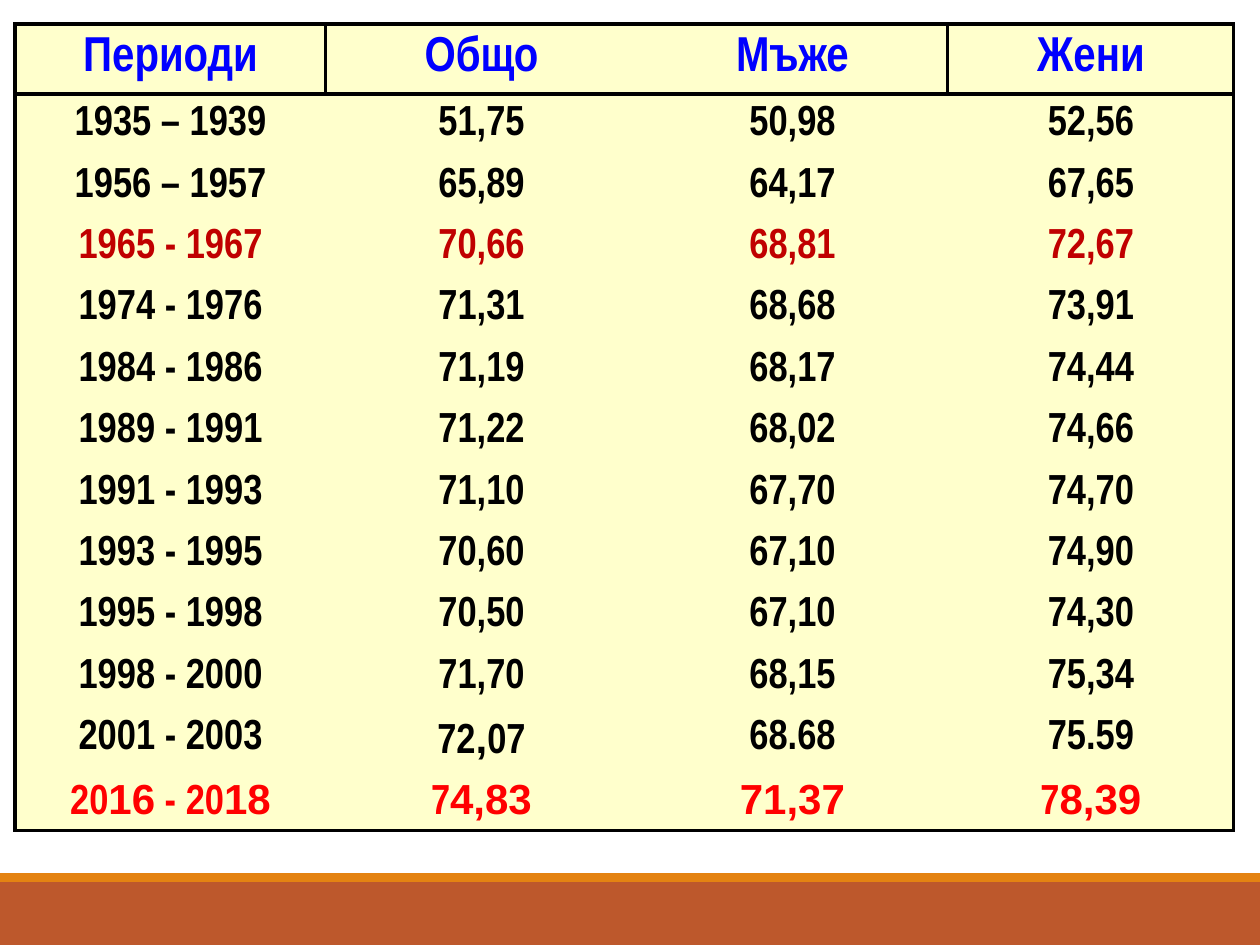
from dataclasses import dataclass

from lxml.etree import SubElement
from pptx import Presentation
from pptx.dml.color import RGBColor
from pptx.enum.shapes import MSO_SHAPE
from pptx.enum.text import MSO_ANCHOR, PP_ALIGN
from pptx.oxml.ns import qn
from pptx.util import Emu, Pt

PX_PER_INCH = 126


@dataclass(frozen=True)
class Theme:
    cell: str = "FFFFCC"
    border: str = "000000"
    header: str = "0000FF"
    body: str = "000000"
    peak: str = "C00000"
    latest: str = "FF0000"
    band: str = "BD582C"
    stripe: str = "E48312"
    narrow: str = "Arial Narrow"
    wide: str = "Arial"
    header_size: int = 28
    body_size: int = 24
    border_width: int = 2


THEME = Theme()

COLUMN_WIDTHS = (311, 311, 311, 286)
HEADER_HEIGHT = 70

# A "|" switches between the narrow and the wide font
LIFE_EXPECTANCY = [
    ("Периоди", "Общо", "Мъже", "Жени"),
    ("1935 – 1939", "51,75", "50,98", "52,56"),
    ("1956 – 1957", "65,89", "64,17", "67,65"),
    ("1965 - 1967", "70,66", "68,81", "72,67"),
    ("1974 - 1976", "71,31", "68,68", "73,91"),
    ("1984 - 1986", "71,19", "68,17", "74,44"),
    ("1989 - 1991", "71,22", "68,02", "74,66"),
    ("1991 - 1993", "71,10", "67,70", "74,70"),
    ("1993 - 1995", "70,60", "67,10", "74,90"),
    ("1995 - 1998", "70,50", "67,10", "74,30"),
    ("1998 - 2000", "71,70", "68,15", "75,34"),
    ("2001 - 2003", "72|,|07", "68.68", "75.59"),
    ("20|16| - 20|18", "7|4,83", "|71,37", "7|8,39"),
]
LAST_ROW = len(LIFE_EXPECTANCY) - 1
LAST_COLUMN = len(COLUMN_WIDTHS) - 1
ROW_COLORS = {0: THEME.header, 3: THEME.peak, LAST_ROW: THEME.latest}


def px(value):
    return Emu(round(value * 914400 / PX_PER_INCH))


def bordered_sides(row, column):
    """Outer frame, a line under the header, and two header dividers."""
    sides = set()
    if column == 0 or (row == 0 and column in (1, LAST_COLUMN)):
        sides.add("L")
    if column == LAST_COLUMN or (row == 0 and column in (0, 2)):
        sides.add("R")
    if row <= 1:
        sides.add("T")
    if row in (0, LAST_ROW):
        sides.add("B")
    return sides


def set_borders(cell, sides):
    properties = cell._tc.get_or_add_tcPr()
    for side in "LRTB":
        line = SubElement(properties, qn(f"a:ln{side}"))
        if side in sides:
            line.set("w", str(Pt(THEME.border_width)))
            fill = SubElement(line, qn("a:solidFill"))
            SubElement(fill, qn("a:srgbClr")).set("val", THEME.border)
        else:
            SubElement(line, qn("a:noFill"))


def write_cell(cell, text, size, color):
    cell.vertical_anchor = MSO_ANCHOR.MIDDLE
    para = cell.text_frame.paragraphs[0]
    para.alignment = PP_ALIGN.CENTER
    for index, part in enumerate(text.split("|")):
        if not part:
            continue
        span = para.add_run()
        span.text = part
        span.font.name = THEME.wide if index % 2 else THEME.narrow
        span.font.size = Pt(size)
        span.font.bold = True
        span.font.color.rgb = RGBColor.from_string(color)


def add_life_table(page, left, top, height):
    frame = page.shapes.add_table(
        len(LIFE_EXPECTANCY), len(COLUMN_WIDTHS),
        px(left), px(top), px(sum(COLUMN_WIDTHS)), px(height))
    table = frame.table
    table.first_row = table.horz_banding = False

    # Grid
    for column, width in zip(table.columns, COLUMN_WIDTHS):
        column.width = px(width)
    for index, row in enumerate(table.rows):
        row.height = px((height - HEADER_HEIGHT) / LAST_ROW if index else HEADER_HEIGHT)

    # Cells
    for row, texts in enumerate(LIFE_EXPECTANCY):
        size = THEME.body_size if row else THEME.header_size
        color = ROW_COLORS.get(row, THEME.body)
        for column, text in enumerate(texts):
            cell = table.cell(row, column)
            set_borders(cell, bordered_sides(row, column))
            cell.fill.solid()
            cell.fill.fore_color.rgb = RGBColor.from_string(THEME.cell)
            write_cell(cell, text, size, color)


def add_footer(page, left, top, width, height):
    stripe_height = 9
    bars = [
        (top + stripe_height, height - stripe_height, THEME.band),
        (top, stripe_height, THEME.stripe),
    ]
    for bar_top, bar_height, color in bars:
        bar = page.shapes.add_shape(
            MSO_SHAPE.RECTANGLE, px(left), px(bar_top), px(width), px(bar_height))
        bar.shadow.inherit = False
        bar.fill.solid()
        bar.fill.fore_color.rgb = RGBColor.from_string(color)
        bar.line.fill.background()


def main():
    deck = Presentation()
    deck.slide_width, deck.slide_height = px(1260), px(945)
    page = deck.slides.add_slide(deck.slide_layouts[6])
    add_footer(page, 0, 873, 1260, 72)
    add_life_table(page, 15, 24, 807)
    deck.save("out.pptx")


if __name__ == "__main__":
    main()
